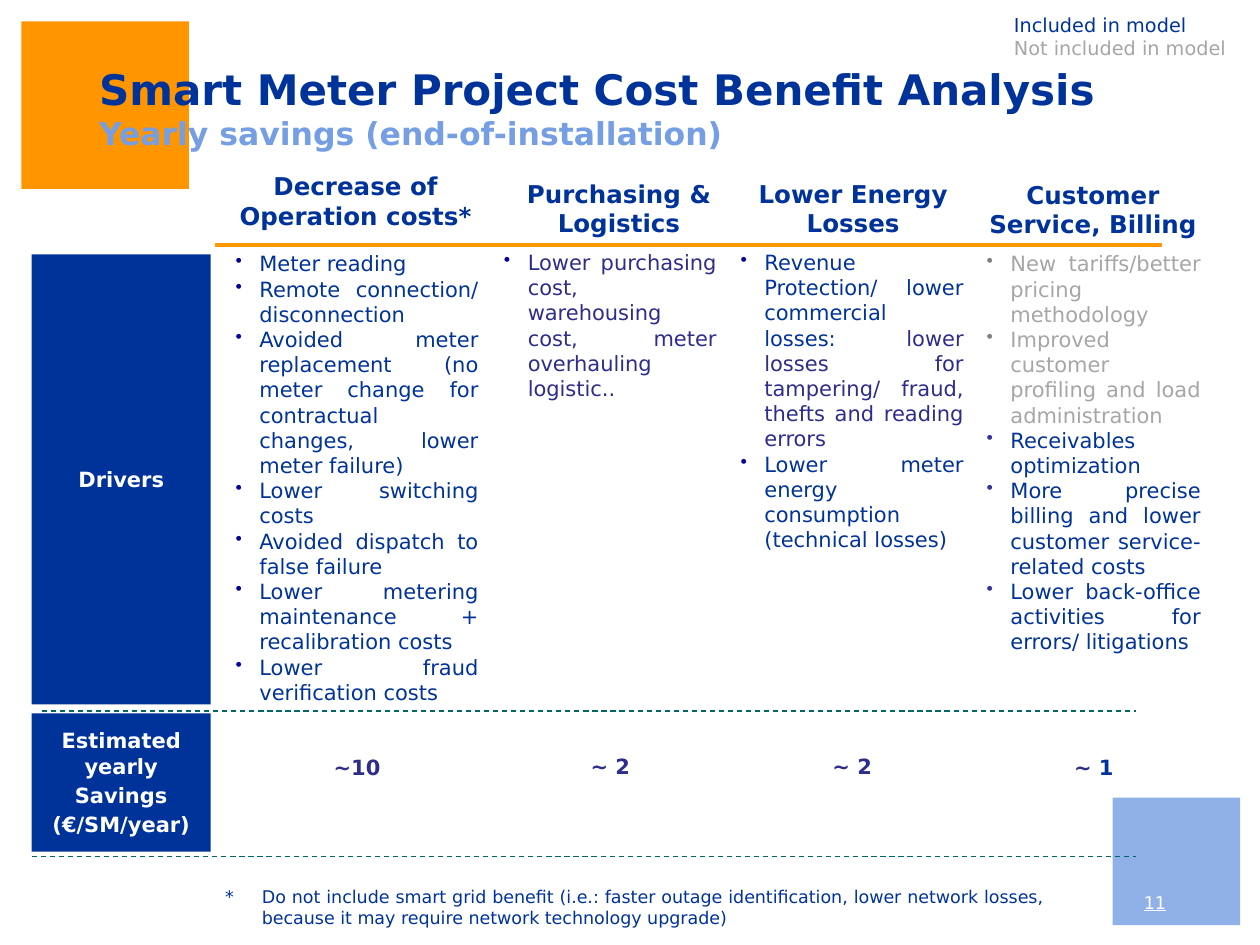
from dataclasses import dataclass
from typing import NamedTuple

from lxml.etree import SubElement
from pptx import Presentation
from pptx.dml.color import RGBColor
from pptx.enum.dml import MSO_LINE
from pptx.enum.shapes import MSO_CONNECTOR, MSO_SHAPE
from pptx.enum.text import MSO_ANCHOR, PP_ALIGN
from pptx.oxml.ns import qn
from pptx.util import Cm, Pt

FONT = "DejaVu Sans"
HEX = {
    "navy": "003399", "sky": "759EE3", "orange": "FF9600", "amber": "FF9900",
    "grey": "A6A6A6", "dot": "808080", "ink": "000099", "plum": "333399",
    "violet": "2D2D8A", "teal": "006666", "white": "FFFFFF",
}
LINE = 14.4  # height of one 12 pt text line
HANG = Cm(0.48)
TIGHT = (0.05, 0.03)
LABEL = (0.15, 0.03)
NORMAL = (0.25, 0.13)


class Box(NamedTuple):
    x: float
    y: float
    w: float
    h: float


class Run(NamedTuple):
    text: str
    hue: str = "navy"
    size: float = 12
    bold: bool = False
    under: bool = False


class Item(NamedTuple):
    runs: list[Run]
    dot: str = "ink"


class Rule(NamedTuple):
    x: float
    end: float
    y: float
    hue: str = "teal"
    width: float = 0.75
    dash: bool = True


@dataclass
class Column:
    head: str
    top: Box
    body: Box
    items: list[Item]
    gap: int  # text lines left free above the value
    value: list[Run]
    anchor: MSO_ANCHOR = MSO_ANCHOR.TOP


def rgb(hue: str) -> RGBColor:
    return RGBColor.from_string(HEX[hue])


def add_runs(para, runs: list[Run], align=PP_ALIGN.LEFT) -> None:
    para.alignment = align
    for part in runs:
        run = para.add_run()
        run.text = part.text
        font = run.font
        font.name, font.size = FONT, Pt(part.size)
        font.bold, font.underline = part.bold, part.under
        font.color.rgb = rgb(part.hue)


def set_frame(shape, inset=NORMAL, anchor=MSO_ANCHOR.TOP, wrap=True):
    frame = shape.text_frame
    frame.word_wrap, frame.vertical_anchor = wrap, anchor
    frame.margin_left = frame.margin_right = Cm(inset[0])
    frame.margin_top = frame.margin_bottom = Cm(inset[1])
    return frame


def add_text(slide, box: Box, inset=NORMAL, anchor=MSO_ANCHOR.TOP):
    return set_frame(slide.shapes.add_textbox(*map(Cm, box)), inset, anchor)


def add_rect(slide, box: Box, hue: str):
    rect = slide.shapes.add_shape(MSO_SHAPE.RECTANGLE, *map(Cm, box))
    rect.shadow.inherit = False
    rect.fill.solid()
    rect.fill.fore_color.rgb = rgb(hue)
    rect.line.fill.background()
    return rect


def add_lines(frame, lines: list[Run], align=PP_ALIGN.LEFT, space: float = 0) -> None:
    for i, line in enumerate(lines):
        para = frame.add_paragraph() if i else frame.paragraphs[0]
        if i:
            para.space_before = Pt(space)
        add_runs(para, [line], align)


def add_rule(slide, rule: Rule) -> None:
    line = slide.shapes.add_connector(
        MSO_CONNECTOR.STRAIGHT, Cm(rule.x), Cm(rule.y), Cm(rule.end), Cm(rule.y))
    line.line.color.rgb = rgb(rule.hue)
    line.line.width = Pt(rule.width)
    if rule.dash:
        line.line.dash_style = MSO_LINE.DASH
    SubElement(line._element.spPr, qn("a:effectLst"))


def hang(para, width: int):
    props = para._p.get_or_add_pPr()
    props.set("marL", str(width))
    props.set("indent", str(-width))
    return props


def add_dot(para, hue: str) -> None:
    props = hang(para, HANG)
    tint = SubElement(props, qn("a:buClr"))
    SubElement(tint, qn("a:srgbClr"), val=HEX[hue])
    SubElement(props, qn("a:buSzPct"), val="90000")
    SubElement(props, qn("a:buChar"), char="•")


def add_column(slide, col: Column) -> None:
    head = add_text(slide, col.top, anchor=col.anchor)
    add_runs(head.paragraphs[0], [Run(col.head, size=14, bold=True)], PP_ALIGN.CENTER)
    body = add_text(slide, col.body, TIGHT)
    for i, item in enumerate(col.items):
        para = body.add_paragraph() if i else body.paragraphs[0]
        add_dot(para, item.dot)
        add_runs(para, item.runs, PP_ALIGN.JUSTIFY)
    para = body.add_paragraph()
    para.space_before = Pt(col.gap * LINE)
    add_runs(para, col.value, PP_ALIGN.CENTER)


COLUMNS = [
    Column("Decrease of Operation costs*", Box(4.44, 3.5, 5.46, 1.27),
           Box(4.7, 5.03, 5, 11.3),
           [Item([Run(text)]) for text in (
               "Meter reading",
               "Remote connection/ disconnection",
               "Avoided meter replacement (no meter change for contractual "
               "changes, lower meter failure)",
               "Lower switching costs",
               "Avoided dispatch to false failure",
               "Lower metering maintenance + recalibration costs",
               "Lower fraud verification costs")],
           2, [Run("~10", "violet", bold=True)], MSO_ANCHOR.BOTTOM),
    Column("Purchasing & Logistics", Box(10.31, 3.48, 4.34, 1.27),
           Box(10.11, 5, 4.39, 11.13),
           [Item([Run("Lower purchasing cost, warehousing cost, meter "
                      "overhauling logistic..", "violet")])],
           14, [Run("~ 2", "violet", bold=True)]),
    Column("Lower Energy Losses", Box(14.94, 3.48, 4.52, 1.27),
           Box(14.88, 5, 4.6, 10.92),
           [Item([Run("Revenue Protection/ lower commercial losses: "),
                  Run("lower losses for tampering/ fraud, thefts and reading errors",
                      "violet")]),
            Item([Run("Lower meter energy consumption (technical losses)")])],
           8, [Run("~ 2", "violet", bold=True)]),
    Column("Customer Service, Billing", Box(19.48, 3.5, 5.11, 1.45),
           Box(19.84, 5.03, 4.42, 10.9),
           [Item([Run(text, hue)], dot) for text, hue, dot in (
               ("New tariffs/better pricing methodology", "grey", "dot"),
               ("Improved customer profiling and load administration", "grey", "dot"),
               ("Receivables optimization", "navy", "plum"),
               ("More precise billing and lower customer service-related costs",
                "navy", "plum"),
               ("Lower back-office activities for errors/ litigations",
                "navy", "plum"))],
           4, [Run("~ ", "violet", bold=True), Run("1", bold=True)]),
]
LABELS = [
    (Box(0.64, 5.13, 3.61, 9.07), ["Drivers"]),
    (Box(0.64, 14.38, 3.61, 2.79), ["Estimated yearly", "Savings", "(€/SM/year)"]),
]
RULES = [
    Rule(0.84, 22.91, 14.33),
    Rule(4.34, 23.42, 4.93, "amber", 2.25, False),
    Rule(0.64, 22.91, 17.27),
]


def main() -> None:
    deck = Presentation()
    deck.slide_width, deck.slide_height = Cm(25.4), Cm(19.05)
    slide = deck.slides.add_slide(deck.slide_layouts[6])

    # Corner squares
    add_rect(slide, Box(0.43, 0.43, 3.38, 3.38), "orange")
    pale = add_rect(slide, Box(22.43, 16.08, 2.57, 2.57), "sky")
    tint = pale._element.spPr.find(qn("a:solidFill"))[0]
    SubElement(tint, qn("a:alpha"), val="80000")

    # Legend
    key = set_frame(add_rect(slide, Box(20.19, 0.13, 4.8, 1.68), "white"), wrap=False)
    add_lines(key, [Run("Included in model", size=11),
                    Run("Not included in model", "grey", 11)])

    # Title
    title = add_text(slide, Box(1.75, 1.32, 22.43, 1.7), anchor=MSO_ANCHOR.MIDDLE)
    add_runs(title.paragraphs[0], [
        Run("Smart Meter Project Cost Benefit Analysis ", size=24, bold=True),
        Run("Yearly savings (end-of-installation)", "sky", 18, True)])

    # Row labels, columns and rules
    for box, lines in LABELS:
        frame = set_frame(add_rect(slide, box, "navy"), LABEL, MSO_ANCHOR.MIDDLE)
        add_lines(frame, [Run(line, "white", bold=True) for line in lines],
                  PP_ALIGN.CENTER, 2.4)
    for col in COLUMNS:
        add_column(slide, col)
    for rule in RULES:
        add_rule(slide, rule)

    # Footnote and page number
    note = add_text(slide, Box(4.29, 17.73, 16.99, 1.22)).paragraphs[0]
    stop = Cm(0.74)
    tabs = SubElement(hang(note, stop), qn("a:tabLst"))
    SubElement(tabs, qn("a:tab"), pos=str(stop), algn="l")
    add_runs(note, [Run("*\tDo not include smart grid benefit (i.e.: faster outage "
                        "identification, lower network losses, because it may require "
                        "network technology upgrade)", size=10)], PP_ALIGN.JUSTIFY)
    page = add_text(slide, Box(22.81, 18.01, 1.2, 0.53), anchor=MSO_ANCHOR.BOTTOM)
    add_runs(page.paragraphs[0], [Run("11", "white", 10, under=True)])

    deck.save("out.pptx")


if __name__ == "__main__":
    main()
